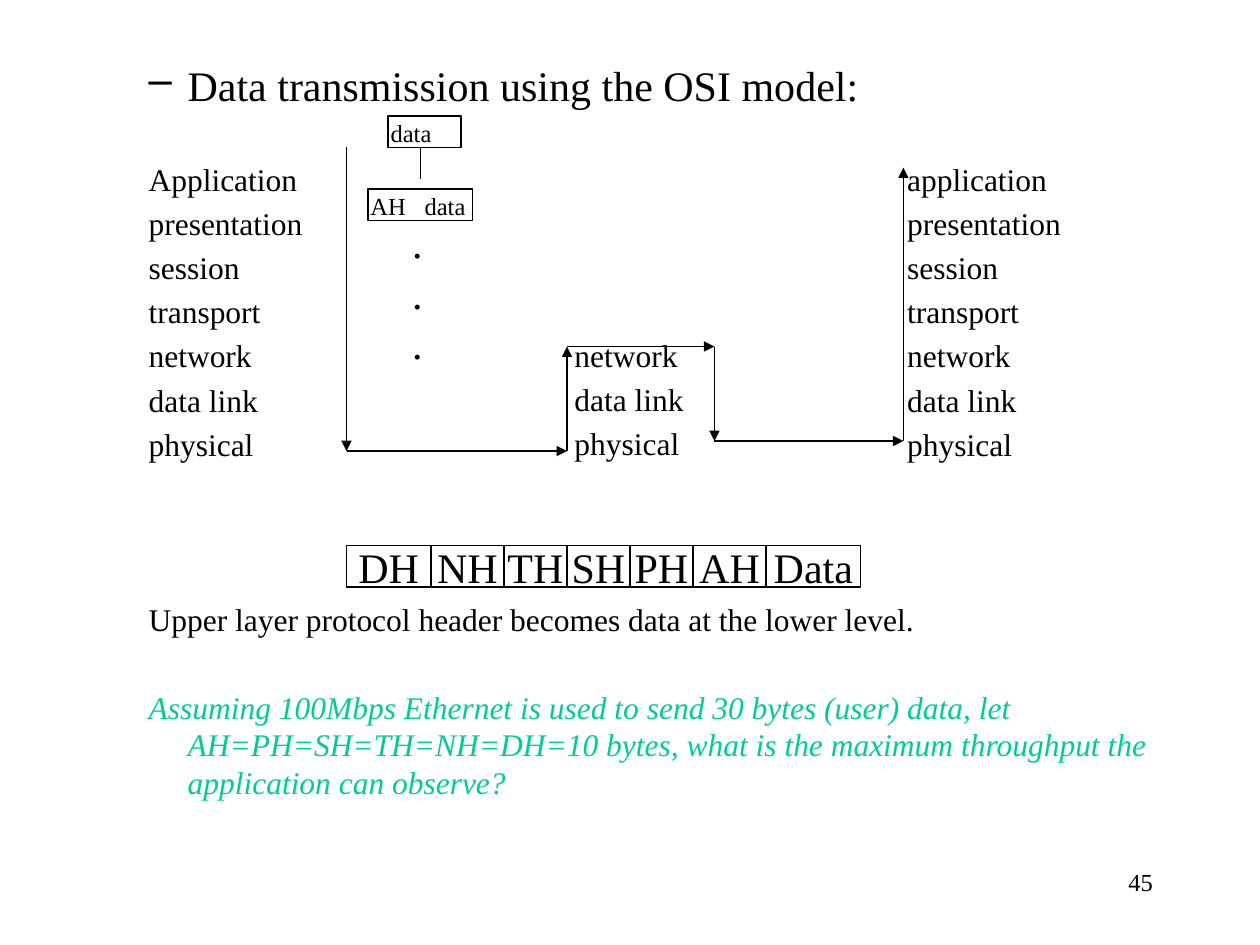
from itertools import pairwise

from lxml import etree
from pptx import Presentation
from pptx import util as u
from pptx.dml.color import RGBColor
from pptx.enum import shapes, text
from pptx.oxml import ns

BLACK = "000000"
GREEN = "00CC99"
FONT = "Times New Roman"
ROW_PITCH = 0.349
LAYERS = ["application", "presentation", "session", "transport",
          "network", "data link", "physical"]


def color(value):
    return RGBColor.from_string(value)


def add_xml(parent, tag, **attributes):
    return etree.SubElement(parent, ns.qn(tag), attributes)


def write(frame, lines, size=18, fill=BLACK, italic=False, align="LEFT",
          anchor="TOP", before=0, hanging=0, bullet=None, tab=None, inset=0):
    frame.word_wrap = True
    frame.auto_size = text.MSO_AUTO_SIZE.NONE
    frame.vertical_anchor = getattr(text.MSO_ANCHOR, anchor)
    frame.margin_left = u.Inches(inset)
    frame.margin_right = frame.margin_top = frame.margin_bottom = 0
    for index, line in enumerate(lines):
        paragraph = frame.paragraphs[0] if index == 0 else frame.add_paragraph()
        paragraph.alignment = getattr(text.PP_ALIGN, align)
        paragraph.space_before = u.Pt(before if index else 0)
        run = paragraph.add_run()
        run.text = line
        run.font.name = FONT
        run.font.size = u.Pt(size)
        run.font.italic = italic
        run.font.color.rgb = color(fill)
        properties = paragraph._p.get_or_add_pPr()
        if hanging:
            properties.set("marL", str(u.Inches(hanging)))
            properties.set("indent", str(-u.Inches(hanging)))
        if bullet:
            add_xml(properties, "a:buChar", char=bullet)
        if tab:
            stops = add_xml(properties, "a:tabLst")
            add_xml(stops, "a:tab", pos=str(u.Inches(tab)), algn="l")


def add_label(slide, box, *lines, **style):
    label = slide.shapes.add_textbox(*map(u.Inches, box))
    write(label.text_frame, lines, **style)


def add_frame(slide, box, *lines, **style):
    frame = slide.shapes.add_shape(shapes.MSO_SHAPE.RECTANGLE, *map(u.Inches, box))
    frame.shadow.inherit = False
    frame.fill.background()
    frame.line.color.rgb = color(BLACK)
    frame.line.width = u.Pt(0.75)
    if lines:
        write(frame.text_frame, lines, **style)


def add_line(slide, start, end, arrow=False):
    line = slide.shapes.add_connector(
        shapes.MSO_CONNECTOR.STRAIGHT, *map(u.Inches, (*start, *end)))
    line.line.color.rgb = color(BLACK)
    line.line.width = u.Pt(0.75)
    if arrow:
        add_xml(line.line._get_or_add_ln(), "a:tailEnd", type="triangle")
    add_xml(line._element.spPr, "a:effectLst")


def add_layer_stack(slide, box, layers):
    add_label(slide, box, *layers, before=3.6)


def add_encapsulation(slide, box):
    left, top, width, height = box
    style = {"size": 14, "anchor": "BOTTOM", "inset": 0.02}
    add_frame(slide, (left + 0.16, top, 0.58, 0.25), "data", **style)
    stem = left + width / 2
    add_line(slide, (stem, top + 0.25), (stem, top + 0.5))
    add_frame(slide, (left, top + 0.58, width, 0.25), "AH\tdata", tab=0.43, **style)
    add_label(slide, (left + 0.35, top + 0.8, 0.15, height - 0.8),
              ".", ".", ".", size=24)


def add_route(slide, box):
    left, top, width, height = box
    right, bottom = left + width, top + height
    router_in, router_out, router_top = left + 1.75, left + 2.92, top + 1.58
    stops = [(left, top), (left, bottom), (router_in, bottom),
             (router_in, router_top), (router_out, router_top),
             (router_out, bottom - 0.08), (right, bottom - 0.08),
             (right, top + 0.16)]
    for start, end in pairwise(stops):
        add_line(slide, start, end, arrow=True)


def add_packet(slide, box):
    left, top, width, height = box
    edges = [left + offset for offset in (0, 0.67, 1.25, 1.75, 2.25, 2.75, 3.33, width)]
    add_frame(slide, box)
    for edge in edges[1:-1]:
        add_line(slide, (edge, top), (edge, top + height))
    fields = ["DH", "NH", "TH", "SH", "PH", "AH", "Data"]
    for field, (start, end) in zip(fields, pairwise(edges)):
        add_label(slide, (start, top, end - start, height), field,
                  size=24, align="CENTER", anchor="MIDDLE")


def add_notes_on_headers(slide, box):
    left, top, width, height = box
    add_label(slide, (left, top, width, ROW_PITCH),
              "Upper layer protocol header becomes data at the lower level.")
    question_top = 2 * ROW_PITCH
    add_label(slide, (left, top + question_top, width, height - question_top),
              "Assuming 100Mbps Ethernet is used to send 30 bytes (user) data, let "
              "AH=PH=SH=TH=NH=DH=10 bytes, what is the maximum throughput the "
              "application can observe?",
              fill=GREEN, italic=True, hanging=0.31)


def main():
    deck = Presentation()
    deck.slide_width, deck.slide_height = u.Inches(10), u.Inches(7.5)
    slide = deck.slides.add_slide(deck.slide_layouts[6])
    add_label(slide, (1.18, 0.47, 8.13, 0.4), "Data transmission using the OSI model:",
              size=24, hanging=0.31, bullet="–")
    stack_top, stack_height = 1.27, len(LAYERS) * ROW_PITCH
    add_layer_stack(slide, (1.18, stack_top, 1.5, stack_height),
                    ["Application", *LAYERS[1:]])
    add_layer_stack(slide, (4.56, stack_top + 4 * ROW_PITCH, 1.1, 3 * ROW_PITCH),
                    LAYERS[4:])
    add_layer_stack(slide, (7.2, stack_top, 1.5, stack_height), LAYERS)
    add_encapsulation(slide, (2.92, 0.92, 0.83, 2.05))
    add_route(slide, (2.75, 1.17, 4.42, 2.41))
    add_packet(slide, (2.75, 4.33, 4.08, 0.33))
    add_notes_on_headers(slide, (1.18, 4.76, 8.13, 1.7))
    add_label(slide, (7.17, 6.88, 1.98, 0.4), "45", size=14, align="RIGHT")
    deck.save("out.pptx")


if __name__ == "__main__":
    main()
